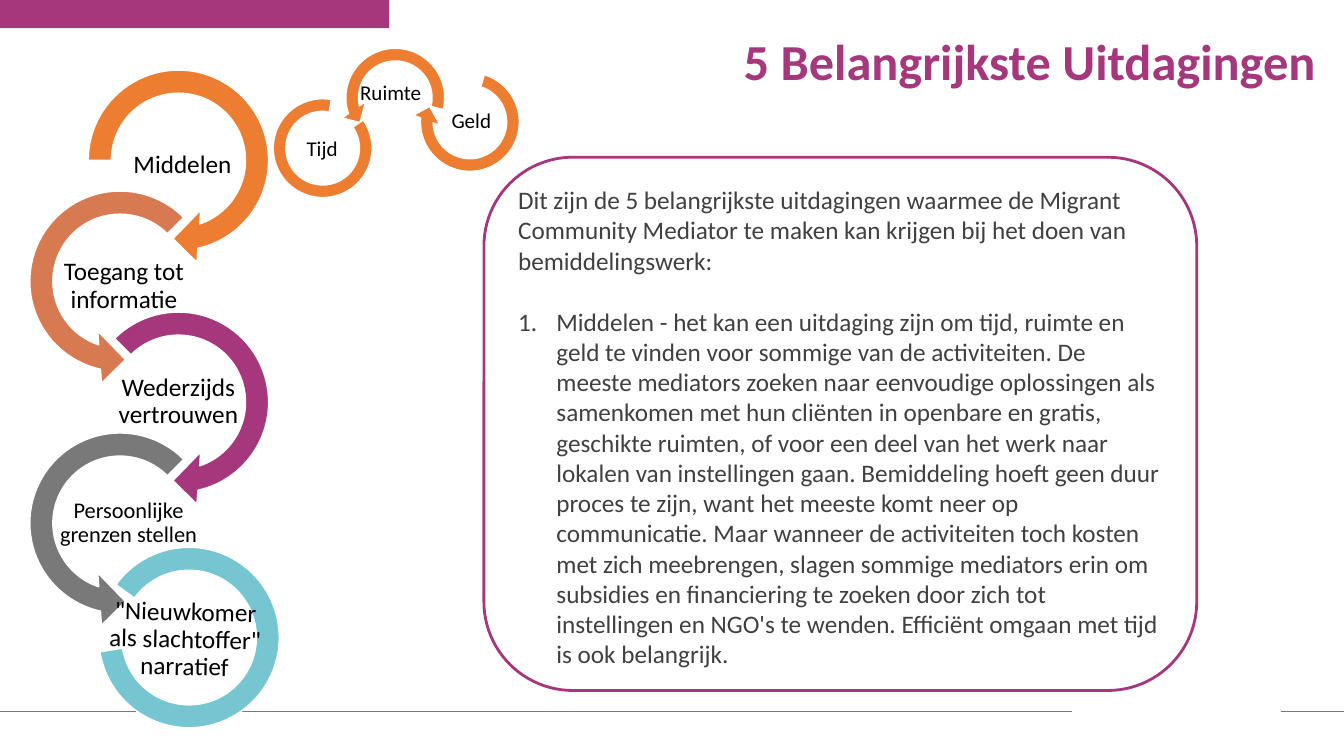
from dataclasses import dataclass

from lxml import etree
from pptx import Presentation
from pptx.dml.color import RGBColor
from pptx.enum.shapes import MSO_CONNECTOR, MSO_SHAPE as Shape
from pptx.enum.text import MSO_ANCHOR as Anchor, PP_ALIGN as Align
from pptx.oxml.ns import qn
from pptx.util import Inches, Pt


@dataclass(frozen=True)
class Theme:
    font: str = "Calibri"
    purple: str = "A6377D"
    orange: str = "ED7D31"
    copper: str = "D87A51"
    grey: str = "797979"
    teal: str = "76C6D2"
    white: str = "FFFFFF"
    black: str = "000000"
    body_ink: str = "404040"
    title: int = 36
    body: int = 18
    small_label: int = 16
    resource: int = 15


THEME = Theme()

TITLE = "5 Belangrijkste Uitdagingen"
INTRO = ("Dit zijn de 5 belangrijkste uitdagingen waarmee de Migrant Community Mediator "
         "te maken kan krijgen bij het doen van bemiddelingswerk:")
FIRST_CHALLENGE = (
    "Middelen - het kan een uitdaging zijn om tijd, ruimte en geld te vinden voor sommige van "
    "de activiteiten. De meeste mediators zoeken naar eenvoudige oplossingen als samenkomen met "
    "hun cliënten in openbare en gratis, geschikte ruimten, of voor een deel van het werk naar "
    "lokalen van instellingen gaan. Bemiddeling hoeft geen duur proces te zijn, want het meeste "
    "komt neer op communicatie. Maar wanneer de activiteiten toch kosten met zich meebrengen, "
    "slagen sommige mediators erin om subsidies en financiering te zoeken door zich tot "
    "instellingen en NGO's te wenden. Efficiënt omgaan met tijd is ook belangrijk.")

RIGHT_ARROW = (Shape.CIRCULAR_ARROW, (0.11, 11.42, 45, 108, 0.125))
LONG_START_ARROW = (Shape.CIRCULAR_ARROW, (0.11, 11.42, 45, 135, 0.125))
LEFT_ARROW = (Shape.LEFT_CIRCULAR_ARROW, (0.11, 11.42, 63, 189, 0.125))
END_ARC = (Shape.BLOCK_ARC, (135, 108, 0.127))

# Ring left, top, diameter, rotation; label left, top, width
RESOURCES = [
    ("Geld", RIGHT_ARROW, (4.09, 0.64, 1.14, 107.1), (4.36, 1.05, 0.63)),
    ("Ruimte", LEFT_ARROW, (3.35, 0.4, 1.14, 58.8), (3.56, 0.77, 0.63)),
    ("Tijd", END_ARC, (2.71, 0.98, 0.98, 100.2), (2.88, 1.32, 0.63)),
]

# Label left, top, width
CHALLENGES = [
    ("Middelen", RIGHT_ARROW, THEME.orange, THEME.body, (1.23, 1.35, 1.16)),
    ("Toegang tot informatie", LEFT_ARROW, THEME.copper, THEME.body, (0.43, 2.55, 1.6)),
    ("Wederzijds vertrouwen", LONG_START_ARROW, THEME.purple, THEME.body, (1, 3.7, 1.54)),
    ("Persoonlijke grenzen stellen", LEFT_ARROW, THEME.grey, THEME.small_label, (0.58, 4.9, 1.39)),
]
CHAIN_TOP, CHAIN_STEP, CHAIN_SIZE = 0.55, 1.2, 2.08
CHAIN_LEFTS = (0.73, 0.15)
FOOTER_Y = 7.06
FOOTER_SPANS = [(0, 10.63), (12.71, 13.33)]

deck = Presentation()
deck.slide_width, deck.slide_height = Inches(13.33), Inches(7.5)
slide = deck.slides.add_slide(deck.slide_layouts[6])


def add_outline(kind, box, fill=None, line=None, width=1):
    shape = slide.shapes.add_shape(kind, *map(Inches, box))
    shape.shadow.inherit = False
    if fill:
        shape.fill.solid()
        shape.fill.fore_color.rgb = RGBColor.from_string(fill)
    else:
        shape.fill.background()
    if line:
        shape.line.color.rgb = RGBColor.from_string(line)
        shape.line.width = Pt(width)
    else:
        shape.line.fill.background()
    return shape


def add_ring(ring, place, fill):
    kind, adjustments = ring
    left, top, size, rotation = place
    shape = add_outline(kind, (left, top, size, size), fill, THEME.white)
    for index, value in enumerate(adjustments):
        shape.adjustments[index] = value
    shape.rotation = rotation


def style(paragraph, size, color, bold=False):
    font = paragraph.font
    font.name, font.size, font.bold = THEME.font, Pt(size), bold
    font.color.rgb = RGBColor.from_string(color)


def add_text(box, paragraphs, size, color, align=Align.LEFT, bold=False, spacing=1.0):
    text_box = slide.shapes.add_textbox(*map(Inches, box))
    frame = text_box.text_frame
    frame.word_wrap = True
    frame.text = "\n".join(paragraphs)
    for paragraph in frame.paragraphs:
        paragraph.alignment = align
        paragraph.line_spacing = spacing
        style(paragraph, size, color, bold)
    return text_box


def add_label(text, place, height, size, rotation=0):
    label = add_text((*place, height), [text], size, THEME.black, Align.CENTER, spacing=0.9)
    frame = label.text_frame
    frame.vertical_anchor = Anchor.MIDDLE
    frame.margin_left = frame.margin_right = Inches(0.01)
    frame.margin_top = frame.margin_bottom = Inches(0.01)
    label.rotation = rotation


def number_paragraph(paragraph, indent):
    properties = paragraph._p.get_or_add_pPr()
    properties.set("marL", str(Inches(indent)))
    properties.set("indent", str(-Inches(indent)))
    numbering = etree.Element(qn("a:buAutoNum"), type="arabicPeriod")
    default_run = properties.find(qn("a:defRPr"))
    default_run.addprevious(numbering)


add_outline(Shape.RECTANGLE, (0, 0, 3.86, 0.28), THEME.purple)
for start, end in FOOTER_SPANS:
    rule = slide.shapes.add_connector(MSO_CONNECTOR.STRAIGHT, Inches(start), Inches(FOOTER_Y),
                                      Inches(end), Inches(FOOTER_Y))
    rule.line.color.rgb = RGBColor.from_string(THEME.grey)
    rule.line.width = Pt(0.5)
    etree.SubElement(rule._element.spPr, qn("a:effectLst"))

add_text((6.81, 0.32, 6.34, 1.18), [TITLE], THEME.title, THEME.purple, Align.RIGHT, True, 0.9)

for name, ring, ring_place, label_place in RESOURCES:
    add_ring(ring, ring_place, THEME.orange)
    add_label(name, label_place, 0.32, THEME.resource)

for index, (name, ring, color, size, label_place) in enumerate(CHALLENGES):
    top = CHAIN_TOP + index * CHAIN_STEP
    add_ring(ring, (CHAIN_LEFTS[index % 2], top, CHAIN_SIZE, 0), color)
    add_label(name, label_place, 0.58, size)
add_ring(END_ARC, (0.98, 5.43, 1.79, 350.9), THEME.teal)
add_label('"Nieuwkomer als slachtoffer" narratief', (1.01, 6.06, 1.65), 0.58, THEME.body, 1.3)

explanation = add_text((5.04, 1.78, 6.61, 4.95), [INTRO, FIRST_CHALLENGE],
                       THEME.body, THEME.body_ink)
challenge = explanation.text_frame.paragraphs[1]
challenge.space_before = Pt(22)
number_paragraph(challenge, 0.38)
add_outline(Shape.ROUNDED_RECTANGLE, (4.8, 1.56, 7.07, 5.29), line=THEME.purple, width=2)

deck.save("out.pptx")
